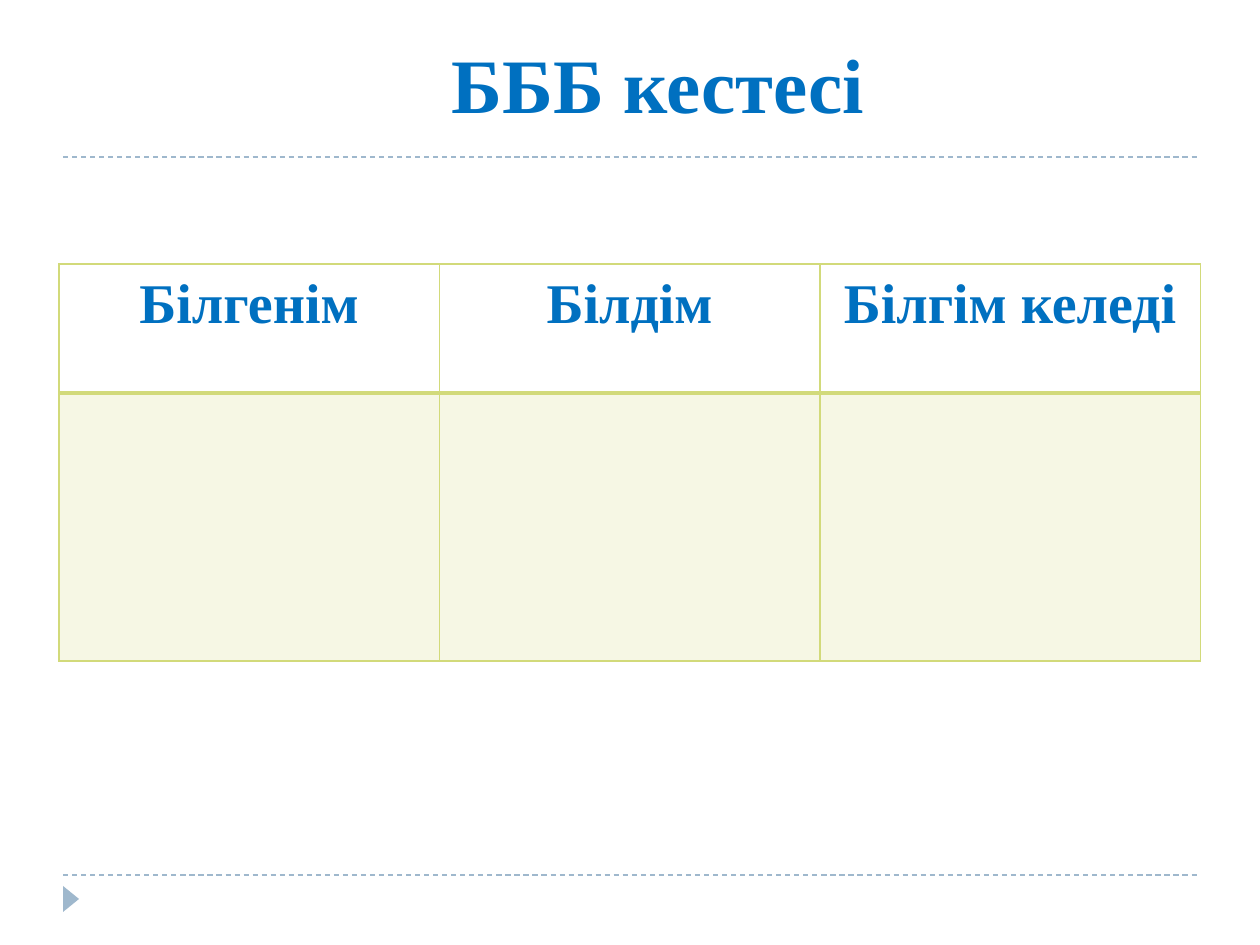
from pptx import Presentation
from pptx.dml.color import RGBColor
from pptx.enum.dml import MSO_LINE_DASH_STYLE as Dash
from pptx.enum.shapes import MSO_CONNECTOR as Connector, MSO_SHAPE as Shape
from pptx.enum.text import MSO_ANCHOR as Anchor, PP_ALIGN as Align
from pptx.oxml.ns import qn
from pptx.util import Emu, Pt
from lxml.etree import SubElement

BLUE = RGBColor(0x00, 0x70, 0xC0)
STEEL = RGBColor(0x9F, 0xB8, 0xCD)
LIME = RGBColor(0xD2, 0xDA, 0x7A)
PX_PER_INCH = 126


def px(length):
    return Emu(round(length * 914400 / PX_PER_INCH))


def write(frame, text, size, color=BLUE, font="Times New Roman", spacing=1.0):
    para = frame.paragraphs[0]
    para.alignment = Align.CENTER
    para.line_spacing = spacing
    span = para.add_run()
    span.text = text
    span.font.name = font
    span.font.size = Pt(size)
    span.font.bold = True
    span.font.color.rgb = color


class SlideBuilder:
    def __init__(self, deck):
        self.slide = deck.slides.add_slide(deck.slide_layouts[5])
        self.shapes = self.slide.shapes

    def title(self, text, left, top, width, height):
        box = self.shapes.title
        box.left, box.top, box.width, box.height = map(px, (left, top, width, height))
        box.text_frame.vertical_anchor = Anchor.MIDDLE
        write(box.text_frame, text, 44)

    def dashed_rule(self, left, right, y):
        rule = self.shapes.add_connector(
            Connector.STRAIGHT, px(left), px(y), px(right), px(y))
        rule.line.color.rgb = STEEL
        rule.line.width = Pt(0.75)
        rule.line.dash_style = Dash.DASH
        SubElement(rule.element.spPr, qn("a:effectLst"))

    def marker(self, left, top, width, height):
        arrow = self.shapes.add_shape(
            Shape.ISOSCELES_TRIANGLE, px(left), px(top), px(width), px(height))
        arrow.rotation = 90
        arrow.shadow.inherit = False
        arrow.fill.solid()
        arrow.fill.fore_color.rgb = STEEL
        arrow.line.fill.background()

    def table(self, headings, left, top, column_width, row_heights):
        count = len(headings)
        table = self.shapes.add_table(
            len(row_heights), count, px(left), px(top),
            px(column_width * count), px(sum(row_heights))).table
        table.first_row = table.horz_banding = False
        for column in table.columns:
            column.width = px(column_width)
        for row, height in zip(table.rows, row_heights):
            row.height = px(height)
        for heading, head, body in zip(headings, *(row.cells for row in table.rows)):
            head.margin_left = head.margin_right = px(9)
            head.margin_top = head.margin_bottom = 0
            write(head.text_frame, heading, 32, spacing=1.15)
            head.fill.background()
            self.borders(head, bottom=2)
            self.tint(body, 20)
            self.borders(body, top=2)

    def tint(self, cell, percent):
        cell.fill.solid()
        cell.fill.fore_color.rgb = LIME
        color = cell._tc.tcPr.find(".//" + qn("a:srgbClr"))
        SubElement(color, qn("a:alpha"), val=str(percent * 1000))

    def borders(self, cell, top=1, bottom=1):
        properties = cell._tc.get_or_add_tcPr()
        sides = {"lnL": 1, "lnR": 1, "lnT": top, "lnB": bottom}
        # Borders come before the fill in the cell properties
        for place, (side, width) in enumerate(sides.items()):
            edge = SubElement(properties, qn("a:" + side), w=str(Pt(width)))
            fill = SubElement(edge, qn("a:solidFill"))
            SubElement(fill, qn("a:srgbClr"), val=str(LIME))
            properties.insert(place, edge)


def main():
    deck = Presentation()
    deck.slide_width, deck.slide_height = px(1260), px(945)
    page = SlideBuilder(deck)

    # Frame of the page
    for y in (157, 875):
        page.dashed_rule(63, 1197, y)
    page.marker(58, 891, 26, 16)

    # Title and table
    page.title("БББ кестесі", 408, 30, 500, 106)
    page.table(["Білгенім", "Білдім", "Білгім келеді"],
               left=59, top=264, column_width=380.5, row_heights=(129, 268))

    deck.save("out.pptx")


if __name__ == "__main__":
    main()
